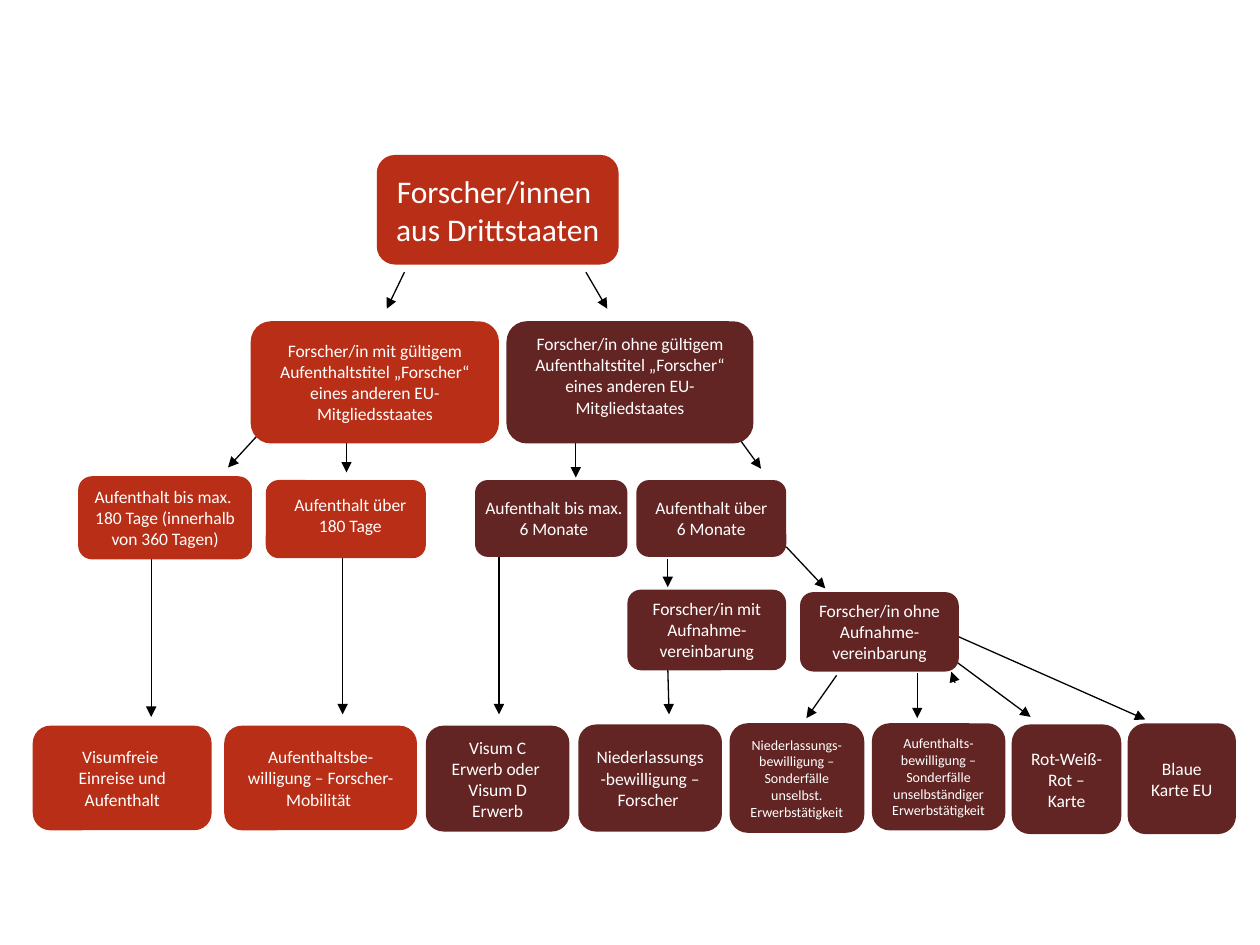
"""Build a decision tree of residence permits for researchers from third countries."""
from dataclasses import dataclass
from typing import NamedTuple, Optional

from lxml.etree import SubElement
from pptx import Presentation
from pptx.dml.color import RGBColor
from pptx.enum.shapes import MSO_CONNECTOR, MSO_SHAPE
from pptx.enum.text import MSO_ANCHOR as Anchor, PP_ALIGN
from pptx.oxml.ns import qn
from pptx.util import Inches, Pt

COLUMNS, ROWS = 100, 75


@dataclass(frozen=True)
class Theme:
    font: str = "Calibri"
    white: RGBColor = RGBColor(0xFF, 0xFF, 0xFF)
    black: RGBColor = RGBColor(0, 0, 0)
    red: RGBColor = RGBColor(0xB9, 0x2E, 0x16)
    maroon: RGBColor = RGBColor(0x63, 0x25, 0x23)
    heading: int = 18
    body: int = 10
    small: int = 8
    line: float = 0.75


class Area(NamedTuple):
    col: float
    row: float
    cols: float
    rows: float


@dataclass(frozen=True)
class Node:
    area: Area
    fill: RGBColor
    text: str
    size: int = 10
    anchor: Anchor = Anchor.MIDDLE
    label: Optional[Area] = None


class Arrow(NamedTuple):
    col: float
    row: float
    to_col: float
    to_row: float


T = Theme()

NODES = [
    Node(Area(29.9, 12.3, 19.2, 8.7), T.red, "Forscher/innen \naus Drittstaaten", T.heading),
    Node(Area(19.9, 25.5, 19.7, 9.7), T.red,
         "Forscher/in mit gültigem Aufenthaltstitel „Forscher“ eines anderen EU- Mitgliedsstaates"),
    Node(Area(40.2, 25.5, 19.6, 9.7), T.maroon,
         "Forscher/in ohne gültigem Aufenthaltstitel „Forscher“ eines anderen EU-Mitgliedstaates",
         anchor=Anchor.TOP),
    Node(Area(6.2, 37.8, 13.8, 6.6), T.red,
         "Aufenthalt bis max. \n180 Tage (innerhalb von 360 Tagen)"),
    Node(Area(21.1, 38.1, 12.7, 6.2), T.red, "Aufenthalt über 180 Tage",
         label=Area(21.2, 38.8, 13.2, 4.2)),
    Node(Area(37.7, 38.1, 12.1, 6.1), T.maroon, "Aufenthalt bis max. \n6 Monate",
         label=Area(37.4, 39.5, 13.1, 3.3)),
    Node(Area(50.5, 38.1, 11.9, 6.1), T.maroon, "Aufenthalt über\n6 Monate"),
    Node(Area(49.8, 46.8, 12.6, 6.4), T.maroon, "Forscher/in mit Aufnahme-vereinbarung"),
    Node(Area(63.5, 47, 12.6, 6.3), T.maroon, "Forscher/in ohne Aufnahme-vereinbarung"),
    Node(Area(2.6, 57.6, 14.2, 8.3), T.red, "Visumfreie \nEinreise und Aufenthalt"),
    Node(Area(17.8, 57.6, 15.3, 8.3), T.red, "Aufenthaltsbe-willigung – Forscher-Mobilität "),
    Node(Area(33.8, 57.6, 11.4, 8.4), T.maroon, "Visum C Erwerb oder \nVisum D Erwerb"),
    Node(Area(45.9, 57.5, 11.4, 8.5), T.maroon, "Niederlassungs-bewilligung – Forscher "),
    Node(Area(57.9, 57.4, 10.7, 8.7), T.maroon,
         "Niederlassungs-bewilligung – Sonderfälle unselbst. Erwerbstätigkeit", T.small),
    Node(Area(69.2, 57.4, 10.6, 8.5), T.maroon,
         "Aufenthalts-bewilligung – Sonderfälle unselbständiger Erwerbstätigkeit", T.small),
    Node(Area(80.3, 57.5, 8.7, 8.7), T.maroon, "Rot-Weiß-Rot – Karte"),
    Node(Area(89.5, 57.4, 8.6, 8.8), T.maroon, "Blaue Karte EU"),
]

ARROWS = [
    Arrow(32.1, 21.6, 30.7, 24.5), Arrow(46.5, 21.6, 48.2, 24.5),
    Arrow(20.4, 34.6, 18.1, 37.1), Arrow(27.5, 34.6, 27.5, 37.5),
    Arrow(45.7, 35.1, 45.7, 37.9), Arrow(58.8, 35, 60.4, 37.2),
    Arrow(53, 44.4, 53, 46.6), Arrow(62.4, 43.4, 65.5, 46.7),
    Arrow(12, 44.4, 12, 56.9), Arrow(27.2, 44.2, 27.2, 56.7),
    Arrow(39.6, 44.1, 39.6, 56.7), Arrow(53, 53.1, 53.1, 56.7),
    Arrow(66.4, 53.6, 64, 57), Arrow(72.8, 53.4, 72.8, 57),
    Arrow(75.8, 54.2, 75.5, 53.3), Arrow(76, 52.6, 81.8, 56.9),
    Arrow(76, 50.5, 90.9, 57.1),
]


def to_emu(prs: Presentation, values: tuple) -> list[int]:
    """Turn alternating columns and rows into slide lengths."""
    cells = (prs.slide_width / COLUMNS, prs.slide_height / ROWS)
    return [round(v * cells[i % 2]) for i, v in enumerate(values)]


def write(tf, node: Node) -> None:
    """Fill a text frame with the centred wording of a node."""
    tf.word_wrap = True
    tf.vertical_anchor = node.anchor
    tf.text = node.text
    for p in tf.paragraphs:
        p.alignment = PP_ALIGN.CENTER
        p.font.name = T.font
        p.font.size = Pt(node.size)
        p.font.color.rgb = T.white


def draw_node(prs: Presentation, s, node: Node) -> None:
    """Draw a rounded box with its text inside or in a separate label."""
    sp = s.shapes.add_shape(MSO_SHAPE.ROUNDED_RECTANGLE, *to_emu(prs, node.area))
    sp.shadow.inherit = False
    sp.fill.solid()
    sp.fill.fore_color.rgb = node.fill
    sp.line.fill.background()
    if node.label:
        sp = s.shapes.add_textbox(*to_emu(prs, node.label))
    write(sp.text_frame, node)


def draw_arrow(prs: Presentation, s, arrow: Arrow) -> None:
    """Draw a straight line that ends in a triangle."""
    cx = s.shapes.add_connector(MSO_CONNECTOR.STRAIGHT, *to_emu(prs, arrow))
    cx.line.color.rgb = T.black
    cx.line.width = Pt(T.line)
    SubElement(cx.line._get_or_add_ln(), qn("a:tailEnd"), type="triangle")
    SubElement(cx._element.spPr, qn("a:effectLst"))


def main() -> None:
    """Draw the tree and save it."""
    prs = Presentation()
    prs.slide_width, prs.slide_height = Inches(10), Inches(7.5)
    s = prs.slides.add_slide(prs.slide_layouts[6])
    for arrow in ARROWS:
        draw_arrow(prs, s, arrow)
    for node in NODES:
        draw_node(prs, s, node)
    prs.save("out.pptx")


if __name__ == "__main__":
    main()
